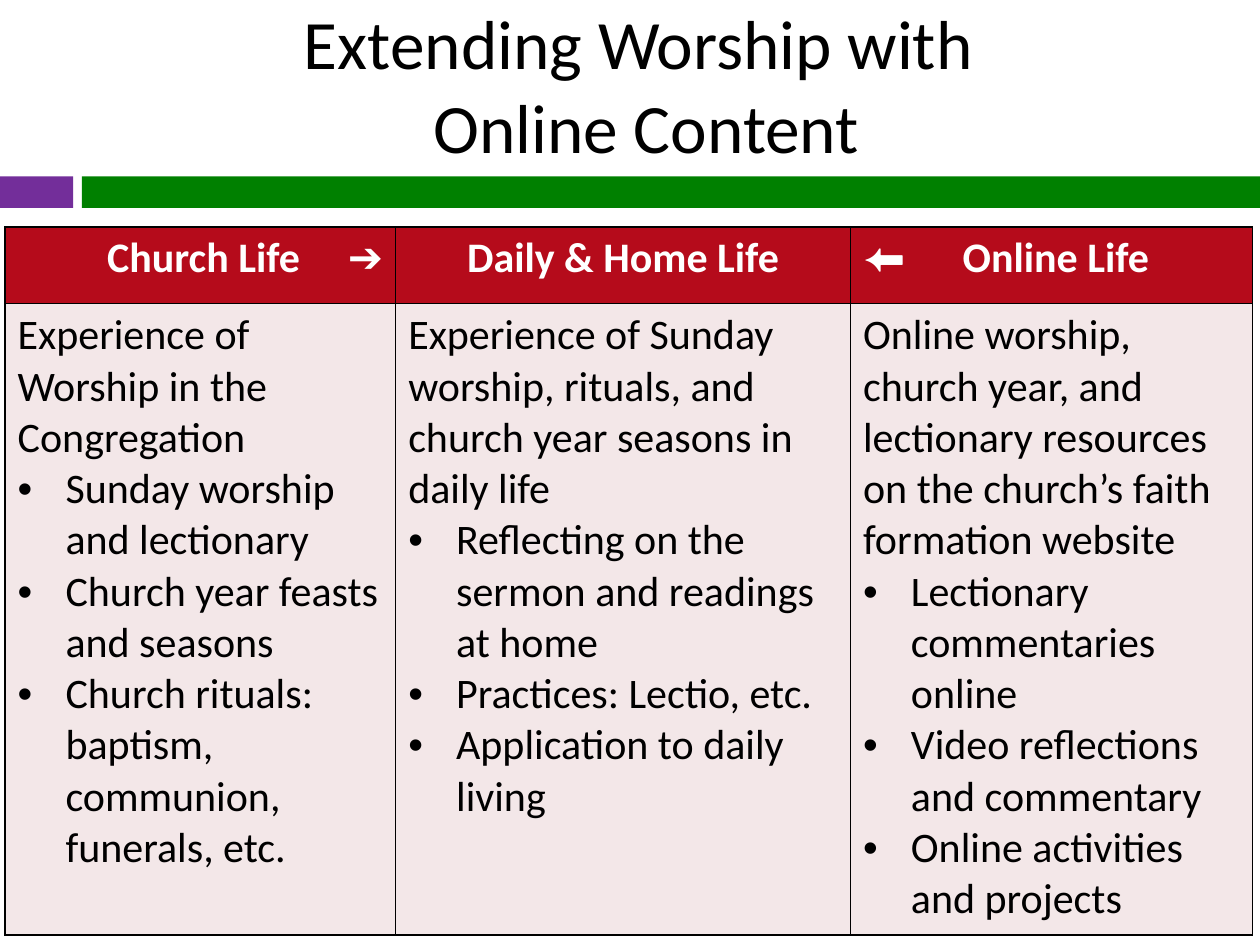
"""Build the slide on extending worship with online content."""
from dataclasses import dataclass

from lxml.etree import SubElement
from pptx import Presentation
from pptx.dml.color import RGBColor
from pptx.enum.shapes import MSO_SHAPE
from pptx.enum.text import MSO_ANCHOR, PP_ALIGN
from pptx.oxml import parse_xml
from pptx.oxml.ns import nsdecls, qn
from pptx.util import Inches, Pt

FONT = "Calibri"
HUES = {
    "black": "000000",
    "white": "FFFFFF",
    "purple": "732E9A",
    "green": "008000",
    "red": "B50B1B",
    "pink": "F3E7E8",
}


@dataclass
class Bar:
    left: float
    width: float
    hue: str


@dataclass
class Column:
    width: float
    head: str
    align: PP_ALIGN
    tabs: tuple
    intro: str
    items: tuple


BARS = (Bar(0, 0.58, "purple"), Bar(0.65, 9.35, "green"))
COLUMNS = (
    Column(3.1, "\tChurch Life\t➔", PP_ALIGN.LEFT, (0.71, 2.62),
           "Experience of Worship in the Congregation",
           ("Sunday worship and lectionary",
            "Church year feasts and seasons",
            "Church rituals: baptism, communion, funerals, etc.")),
    Column(3.61, "Daily & Home Life", PP_ALIGN.CENTER, (),
           "Experience of Sunday worship, rituals, and church year seasons in daily life",
           ("Reflecting on the sermon and readings at home",
            "Practices: Lectio, etc.",
            "Application to daily living")),
    Column(3.19, "⬅\tOnline Life", PP_ALIGN.LEFT, (0.79,),
           "Online worship, church year, and lectionary resources "
           "on the church’s faith formation website",
           ("Lectionary commentaries online",
            "Video reflections and commentary",
            "Online activities and projects")),
)


def color(hue: str) -> RGBColor:
    """Return the named colour."""
    return RGBColor.from_string(HUES[hue])


def style(para, size: float, hue: str, bold: bool = False) -> None:
    """Format every run of a paragraph."""
    for run in para.runs:
        run.font.name = FONT
        run.font.size = Pt(size)
        run.font.bold = bold
        run.font.color.rgb = color(hue)


def add_title(slide, text: str) -> None:
    """Add the centred title."""
    box = slide.shapes.add_textbox(Inches(0.67), 0, Inches(8.92), Inches(1.33))
    frame = box.text_frame
    frame.word_wrap = True
    frame.vertical_anchor = MSO_ANCHOR.MIDDLE
    frame.text = text
    para = frame.paragraphs[0]
    para.alignment = PP_ALIGN.CENTER
    style(para, 39.6, "black")


def add_bar(slide, bar: Bar) -> None:
    """Add one part of the band below the title."""
    shape = slide.shapes.add_shape(MSO_SHAPE.RECTANGLE, Inches(bar.left), Inches(1.4),
                                   Inches(bar.width), Inches(0.25))
    shape.shadow.inherit = False
    shape.fill.solid()
    shape.fill.fore_color.rgb = color(bar.hue)
    shape.line.fill.background()


def paint(cell, hue: str) -> None:
    """Fill a cell and draw its four borders."""
    cell.fill.solid()
    cell.fill.fore_color.rgb = color(hue)
    props = cell._tc.get_or_add_tcPr()
    for spot, side in enumerate("LRTB"):
        props.insert(spot, parse_xml(
            f'<a:ln{side} {nsdecls("a")} w="{Pt(1)}"><a:solidFill>'
            f'<a:srgbClr val="{HUES["black"]}"/></a:solidFill></a:ln{side}>'))


def add_tabs(para, stops: tuple) -> None:
    """Set left tab stops on a paragraph."""
    group = SubElement(para._p.get_or_add_pPr(), qn("a:tabLst"))
    for stop in stops:
        SubElement(group, qn("a:tab"), pos=str(Inches(stop)), algn="l")


def add_bullet(para) -> None:
    """Give a paragraph a hanging bullet."""
    props = para._p.get_or_add_pPr()
    props.set("marL", str(Inches(0.38)))
    props.set("indent", str(Inches(-0.38)))
    SubElement(props, qn("a:buFont"), typeface="Arial")
    SubElement(props, qn("a:buChar"), char="•")


def fill_head(cell, col: Column) -> None:
    """Write a column heading."""
    paint(cell, "red")
    para = cell.text_frame.paragraphs[0]
    para.text = col.head
    para.alignment = col.align
    if col.tabs:
        cell.margin_right = Inches(0)
        add_tabs(para, col.tabs)
    style(para, 24, "white", True)


def fill_body(cell, col: Column) -> None:
    """Write a column's introduction and bullets."""
    paint(cell, "pink")
    frame = cell.text_frame
    frame.text = col.intro
    for item in col.items:
        para = frame.add_paragraph()
        para.text = item
        add_bullet(para)
    for para in frame.paragraphs:
        style(para, 24, "black")


def add_grid(slide) -> None:
    """Add the table of columns."""
    grid = slide.shapes.add_table(2, len(COLUMNS), Inches(0.04), Inches(1.8),
                                  Inches(9.9), Inches(5.62)).table
    for row, height in zip(grid.rows, (0.61, 5.01)):
        row.height = Inches(height)
    for spot, col in enumerate(COLUMNS):
        grid.columns[spot].width = Inches(col.width)
        fill_head(grid.cell(0, spot), col)
        fill_body(grid.cell(1, spot), col)


def main() -> None:
    """Build and save the slide."""
    deck = Presentation()
    deck.slide_width, deck.slide_height = Inches(10), Inches(7.5)
    slide = deck.slides.add_slide(deck.slide_layouts[6])
    for bar in BARS:
        add_bar(slide, bar)
    add_title(slide, "Extending Worship with \vOnline Content")
    add_grid(slide)
    deck.save("out.pptx")


if __name__ == "__main__":
    main()
